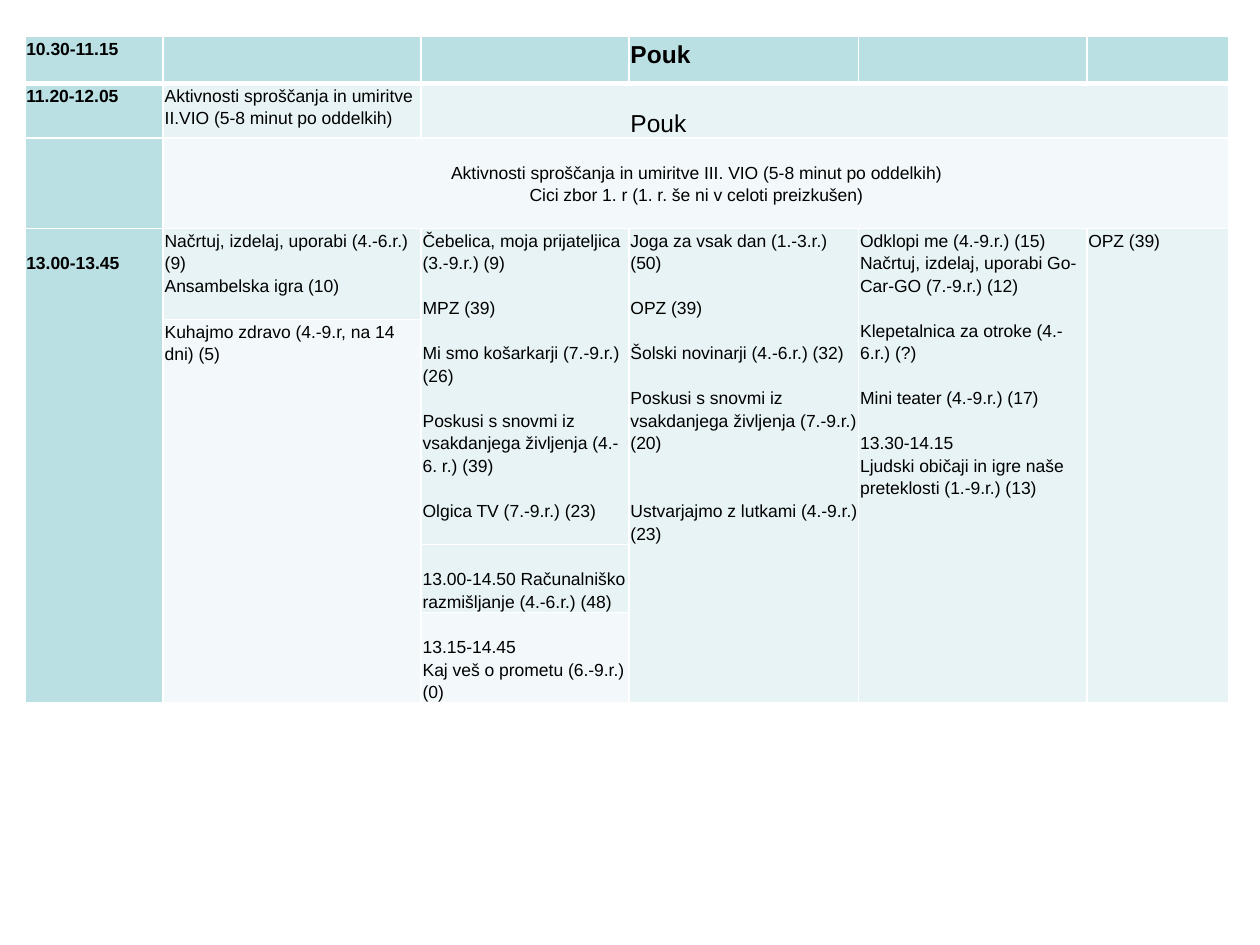
from dataclasses import dataclass

from lxml.etree import SubElement
from pptx import Presentation
from pptx.dml.color import RGBColor
from pptx.enum.text import PP_ALIGN
from pptx.oxml.ns import qn
from pptx.util import Cm, Pt

TEAL = RGBColor(0xBB, 0xE0, 0xE3)
PALE = RGBColor(0xE7, 0xF3, 0xF4)
PALEST = RGBColor(0xF3, 0xF9, 0xFA)
BLACK = RGBColor(0, 0, 0)
WHITE = RGBColor(0xFF, 0xFF, 0xFF)

COLUMN_WIDTHS = [2.79, 5.2, 4.19, 4.63, 4.6, 2.87]
ROW_HEIGHTS = [0.94, 1.1, 1.83, 1.83, 4.54, 1.37, 1.82]
BLANK_LINE = Pt(12.9)
SIDE_MARGIN = Cm(0.03)


@dataclass
class Entry:
    row: int
    column: int
    text: str = ""
    fill: RGBColor = PALE
    rows: int = 1
    columns: int = 1
    size: int = 10
    bold: bool = False
    align: PP_ALIGN = PP_ALIGN.LEFT
    indent: float = 0


ENTRIES = [
    Entry(0, 0, "10.30-11.15", TEAL, bold=True),
    Entry(0, 1, fill=TEAL),
    Entry(0, 2, fill=TEAL),
    Entry(0, 3, "Pouk", TEAL, size=14, bold=True),
    Entry(0, 4, fill=TEAL),
    Entry(0, 5, fill=TEAL),
    Entry(1, 0, "11.20-12.05", TEAL, bold=True),
    Entry(1, 1, "Aktivnosti sproščanja in umiritve II.VIO (5-8 minut po oddelkih)"),
    Entry(1, 2, "\nPouk", columns=4, size=14, indent=COLUMN_WIDTHS[2]),
    Entry(2, 0, fill=TEAL),
    Entry(2, 1, """
Aktivnosti sproščanja in umiritve III. VIO (5-8 minut po oddelkih)
Cici zbor 1. r (1. r. še ni v celoti preizkušen)""",
          PALEST, columns=5, align=PP_ALIGN.CENTER),
    Entry(3, 0, "\n13.00-13.45", TEAL, rows=4, bold=True),
    Entry(3, 1, "Načrtuj, izdelaj, uporabi (4.-6.r.) (9)\nAnsambelska igra (10)"),
    Entry(3, 2, """Čebelica, moja prijateljica (3.-9.r.) (9)

MPZ (39)

Mi smo košarkarji (7.-9.r.) (26)

Poskusi s snovmi iz vsakdanjega življenja (4.-6. r.) (39)

Olgica TV (7.-9.r.) (23)""", rows=2),
    Entry(3, 3, """Joga za vsak dan (1.-3.r.) (50)

OPZ (39)

Šolski novinarji (4.-6.r.) (32)

Poskusi s snovmi iz vsakdanjega življenja (7.-9.r.) (20)


Ustvarjajmo z lutkami (4.-9.r.) (23)""", rows=4),
    Entry(3, 4, """Odklopi me (4.-9.r.) (15)
Načrtuj, izdelaj, uporabi Go-Car-GO (7.-9.r.) (12)

Klepetalnica za otroke (4.-6.r.) (?)

Mini teater (4.-9.r.) (17)

13.30-14.15
Ljudski običaji in igre naše preteklosti (1.-9.r.) (13)""", rows=4),
    Entry(3, 5, "OPZ (39)", rows=4),
    Entry(4, 1, "Kuhajmo zdravo (4.-9.r, na 14 dni) (5)", PALEST, rows=3),
    Entry(5, 2, "\n13.00-14.50 Računalniško razmišljanje (4.-6.r.) (48)"),
    Entry(6, 2, "\n13.15-14.45\nKaj veš o prometu (6.-9.r.) (0)", PALEST),
]


def draw_borders(cell, bottom_width):
    properties = cell._tc.get_or_add_tcPr()
    for side, width in (("L", 1), ("R", 1), ("T", 1), ("B", bottom_width)):
        border = SubElement(properties, qn(f"a:ln{side}"), w=str(Pt(width)))
        fill = SubElement(border, qn("a:solidFill"))
        SubElement(fill, qn("a:srgbClr"), val=str(WHITE))


def write_entry(cell, entry):
    cell.margin_left = SIDE_MARGIN + Cm(entry.indent)
    frame = cell.text_frame
    gap = 0
    paragraph = None
    for line in entry.text.split("\n"):
        if not line:
            gap += 1
            continue
        if paragraph is None:
            paragraph = frame.paragraphs[0]
            cell.margin_top = gap * BLANK_LINE
        else:
            paragraph = frame.add_paragraph()
            paragraph.space_before = gap * BLANK_LINE
        gap = 0
        paragraph.text = line
        paragraph.alignment = entry.align
        paragraph.line_spacing = 1.15
        font = paragraph.font
        font.name = "Arial"
        font.size = Pt(entry.size)
        font.bold = entry.bold
        font.color.rgb = BLACK


def add_timetable(slide, left, top, width, height):
    timetable = slide.shapes.add_table(
        len(ROW_HEIGHTS), len(COLUMN_WIDTHS), left, top, width, height).table
    timetable.first_row = False
    timetable.horz_banding = False
    for column, column_width in zip(timetable.columns, COLUMN_WIDTHS):
        column.width = Cm(column_width)
    for row, row_height in zip(timetable.rows, ROW_HEIGHTS):
        row.height = Cm(row_height)

    for index, row in enumerate(timetable.rows):
        for cell in row.cells:
            cell.margin_left = cell.margin_right = SIDE_MARGIN
            cell.margin_top = cell.margin_bottom = 0
            draw_borders(cell, 3 if index == 0 else 1)

    for entry in ENTRIES:
        cell = timetable.cell(entry.row, entry.column)
        last_row = entry.row + entry.rows
        last_column = entry.column + entry.columns
        if entry.rows * entry.columns > 1:
            cell.merge(timetable.cell(last_row - 1, last_column - 1))
        for row in range(entry.row, last_row):
            for column in range(entry.column, last_column):
                covered = timetable.cell(row, column)
                covered.fill.solid()
                covered.fill.fore_color.rgb = entry.fill
        write_entry(cell, entry)


def main():
    presentation = Presentation()
    presentation.slide_width = Cm(25.4)
    presentation.slide_height = Cm(19.05)
    slide = presentation.slides.add_slide(presentation.slide_layouts[6])
    add_timetable(slide, Cm(0.5), Cm(0.74),
                  Cm(sum(COLUMN_WIDTHS)), Cm(sum(ROW_HEIGHTS)))
    presentation.save("out.pptx")


if __name__ == "__main__":
    main()
